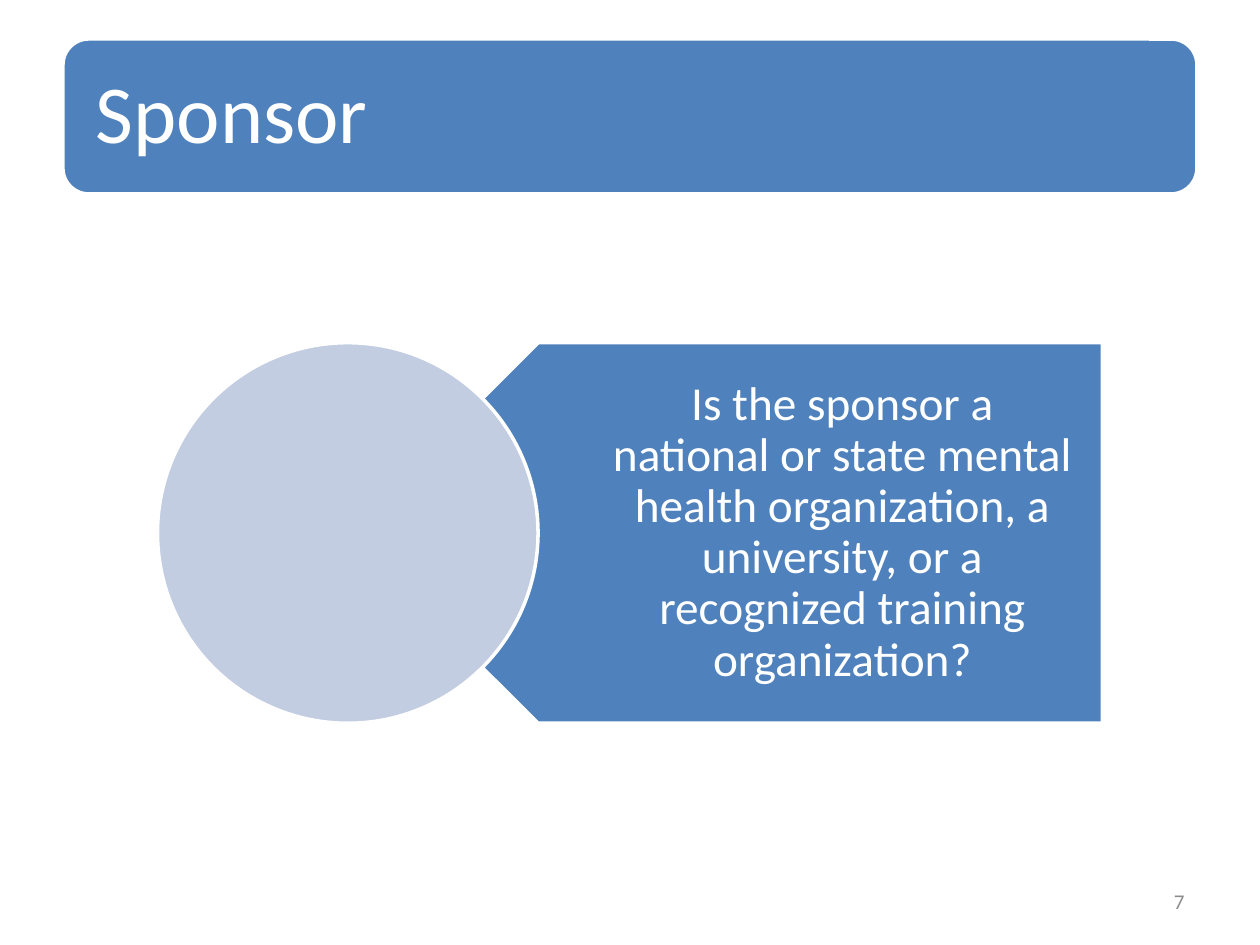
import pptx
import pptx.dml.color
import pptx.enum.shapes
import pptx.enum.text
import pptx.util

Inches = pptx.util.Inches
SHAPES = pptx.enum.shapes.MSO_SHAPE
ALIGN = pptx.enum.text.PP_ALIGN

COLORS = {"blue": "4F81BD", "pale": "C2CDE1", "white": "FFFFFF", "gray": "8C8C8C"}


class SlideBuilder:
    font = "Calibri"
    outline = pptx.util.Pt(2)

    def __init__(self, slide):
        self.slide = slide

    def color(self, name):
        return pptx.dml.color.RGBColor.from_string(COLORS[name])

    def shape(self, kind, box, fill, rotation=0):
        shape = self.slide.shapes.add_shape(kind, *map(Inches, box))
        shape.shadow.inherit = False
        shape.fill.solid()
        shape.fill.fore_color.rgb = self.color(fill)
        shape.line.color.rgb = self.color("white")
        shape.line.width = self.outline
        shape.rotation = rotation
        return shape

    def set_text(self, holder, text, size, color, align, insets, spacing):
        """Fill a text holder; insets run left, top, right, bottom."""
        frame = holder.text_frame
        frame.text = text
        frame.word_wrap = True
        frame.auto_size = pptx.enum.text.MSO_AUTO_SIZE.NONE
        frame.vertical_anchor = pptx.enum.text.MSO_ANCHOR.MIDDLE
        (frame.margin_left, frame.margin_top,
         frame.margin_right, frame.margin_bottom) = map(Inches, insets)
        paragraph = frame.paragraphs[0]
        paragraph.alignment = align
        paragraph.line_spacing = spacing
        font = paragraph.runs[0].font
        font.name = self.font
        font.size = pptx.util.Pt(size)
        font.color.rgb = self.color(color)

    def title(self, text, box, banner):
        """Place the title placeholder directly in front of its banner."""
        title = self.slide.shapes.title
        title.left, title.top, title.width, title.height = map(Inches, box)
        self.set_text(title, text, 47, "white", ALIGN.LEFT, (0.2,) * 4, 0.9)
        banner.element.addnext(title.element)

    def text(self, text, box, size, color, align,
             insets=(0.1, 0.05, 0.1, 0.05), spacing=1.0):
        holder = self.slide.shapes.add_textbox(*map(Inches, box))
        self.set_text(holder, text, size, color, align, insets, spacing)


def main():
    deck = pptx.Presentation()
    deck.slide_width, deck.slide_height = Inches(10), Inches(7.5)
    title_only = deck.slide_layouts[5]
    builder = SlideBuilder(deck.slides.add_slide(title_only))

    banner = builder.shape(SHAPES.ROUNDED_RECTANGLE, (0.5, 0.31, 9, 1.23), "blue")
    builder.title("Sponsor", (0.56, 0.37, 8.88, 1.11), banner)

    top, height = 2.72, 3.02
    builder.shape(SHAPES.PENTAGON, (2.76, top, 5.99, height), "blue", rotation=180)
    builder.text(
        "Is the sponsor a national or state mental health organization, "
        "a university, or a recognized training organization?",
        (3.51, top, 5.23, height), 27, "white", ALIGN.CENTER,
        insets=(1.33, 0.11, 0.21, 0.11), spacing=0.9)
    builder.shape(SHAPES.OVAL, (1.25, top, height, height), "pale")

    builder.text("7", (7.17, 6.95, 2.33, 0.4), 12, "gray", ALIGN.RIGHT)
    deck.save("out.pptx")


if __name__ == "__main__":
    main()
